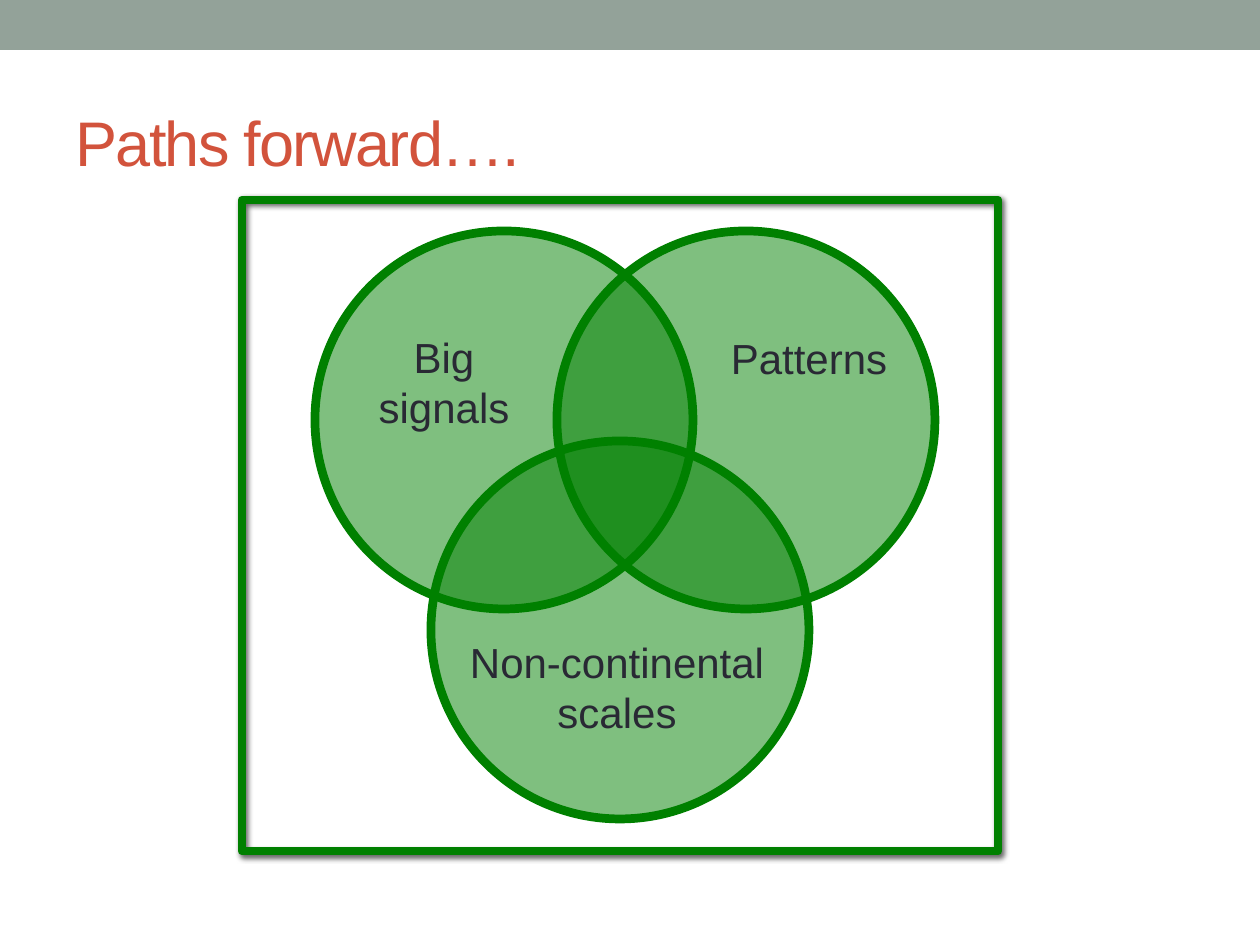
from lxml import etree
from pptx import Presentation
from pptx import util as u
from pptx.dml.color import RGBColor
from pptx.enum import shapes, text
from pptx.oxml import parse_xml
from pptx.oxml.ns import qn

PX = u.Inches(1) / 126
GREEN = RGBColor(0x00, 0x80, 0x00)
BAND = RGBColor(0x93, 0xA2, 0x99)
RED = RGBColor(0xD2, 0x53, 0x3C)
INK = RGBColor(0x29, 0x29, 0x34)
SHADOW = (
    '<a:outerShdw xmlns:a="http://schemas.openxmlformats.org/drawingml/2006/main" '
    'blurRad="38100" dist="25400" dir="2700000" rotWithShape="0">'
    '<a:srgbClr val="000000"><a:alpha val="60000"/></a:srgbClr></a:outerShdw>'
)


def px(*lengths):
    return [u.Emu(round(n * PX)) for n in lengths]


def add_outlined(kind, *box):
    """Add an unfilled shape with the thick green outline."""
    sp = s.shapes.add_shape(kind, *px(*box))
    sp.shadow.inherit = False
    sp.fill.background()
    sp.line.color.rgb = GREEN
    sp.line.width = u.Pt(5)
    return sp


prs = Presentation()
prs.slide_width, prs.slide_height = px(1260, 945)
s = prs.slides.add_slide(prs.slide_layouts[5])

band = s.shapes.add_shape(shapes.MSO_SHAPE.RECTANGLE, *px(0, 0, 1260, 50))
band.shadow.inherit = False
band.fill.solid()
band.fill.fore_color.rgb = BAND
band.line.fill.background()

title = s.shapes.title
title.left, title.top, title.width, title.height = px(63, 73, 1134, 136)
tf = title.text_frame
tf.text = "Paths forward…."
tf.vertical_anchor = text.MSO_ANCHOR.MIDDLE
p = tf.paragraphs[0]
p.alignment = text.PP_ALIGN.LEFT
r = p.runs[0]
r.font.name = "Arial"
r.font.size = u.Pt(36)
r.font.color.rgb = RED
r.font._element.set("spc", "-100")

# Venn circles
for left, top in [(315, 231), (557, 231), (431, 441)]:
    circle = add_outlined(shapes.MSO_SHAPE.OVAL, left, top, 378, 378)
    circle.fill.solid()
    circle.fill.fore_color.rgb = GREEN
    color = circle._element.spPr.find(qn("a:solidFill"))[0]
    etree.SubElement(color, qn("a:alpha")).set("val", "50000")

# Circle labels
for lines, box in [
    (["Big", "signals"], (365, 325, 158, 115)),
    (["Non-continental", "scales"], (456, 630, 322, 115)),
    (["Patterns"], (717, 326, 184, 63)),
]:
    tf = s.shapes.add_textbox(*px(*box)).text_frame
    tf.word_wrap = False
    tf.auto_size = text.MSO_AUTO_SIZE.SHAPE_TO_FIT_TEXT
    tf.text = "\n".join(lines)
    for p in tf.paragraphs:
        p.alignment = text.PP_ALIGN.CENTER
        p.font.name = "Arial"
        p.font.size = u.Pt(24)
        p.font.color.rgb = INK

frame = add_outlined(shapes.MSO_SHAPE.RECTANGLE, 242, 200, 756, 651)
spPr = frame._element.spPr
etree.SubElement(spPr.find(qn("a:ln")), qn("a:round"))
spPr.find(qn("a:effectLst")).append(parse_xml(SHADOW))

prs.save("out.pptx")
